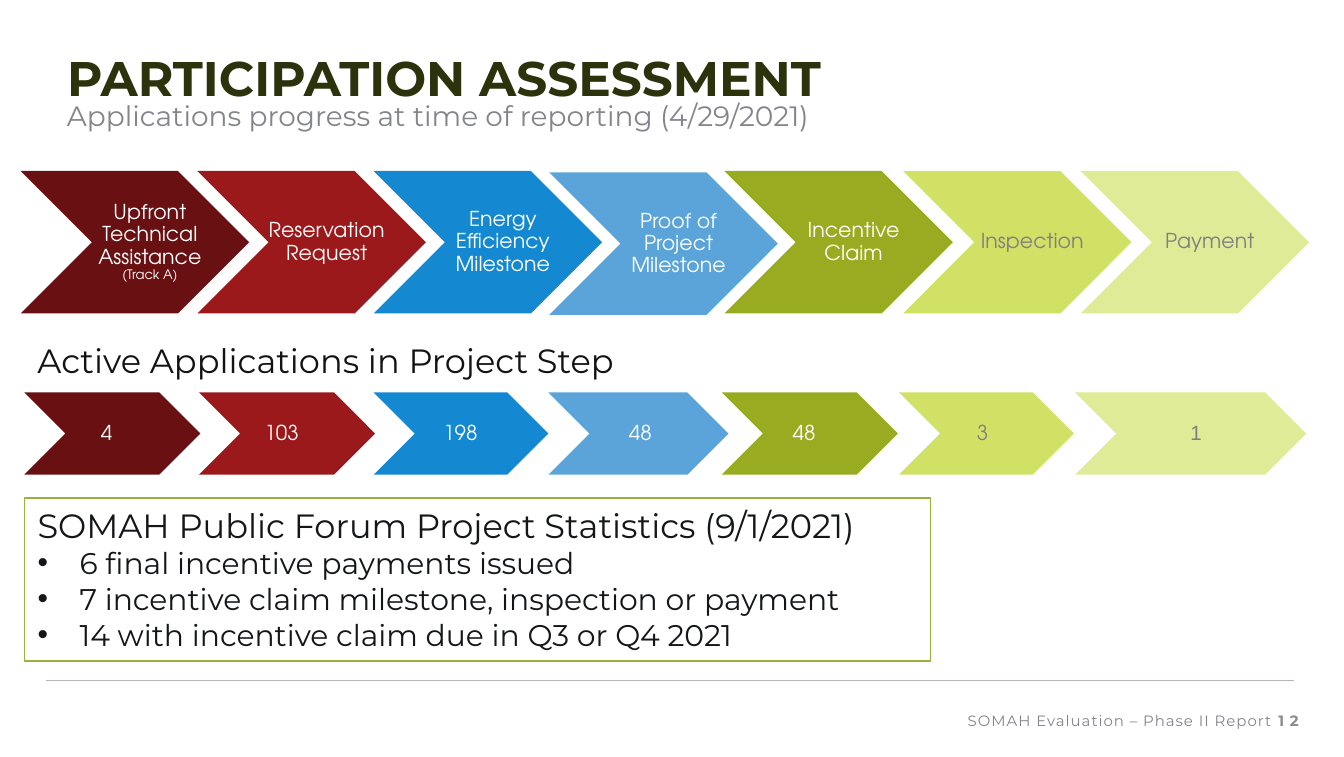
from pptx import Presentation
from pptx.dml.color import RGBColor
from pptx.enum.shapes import MSO_CONNECTOR, MSO_SHAPE
from pptx.enum.text import MSO_ANCHOR, MSO_AUTO_SIZE, PP_ALIGN
from pptx.oxml.ns import qn
from pptx.util import Pt
from lxml.etree import SubElement

HUES = {
    "maroon": "681012", "red": "9C191B", "blue": "1488D1", "sky": "5AA4DA",
    "olive": "99AB21", "lime": "D1E165", "pale": "E0EB98", "white": "FFFFFF",
    "gray": "808080", "title": "2B320C", "slate": "84848D", "page": "8C8C8C",
    "ink": "141313", "body": "141619", "frame": "97B23E", "rule": "BAB3BC",
}
SANS, GEO = "Montserrat", "TeX Gyre Adventor"
TIGHT = {"margin_left": Pt(3.6), "margin_right": Pt(1.44),
         "margin_top": Pt(1.44), "margin_bottom": Pt(1.44),
         "vertical_anchor": MSO_ANCHOR.MIDDLE}
TOP = {"vertical_anchor": MSO_ANCHOR.TOP}
MIDDLE = {"vertical_anchor": MSO_ANCHOR.MIDDLE}
CENTER = {"alignment": PP_ALIGN.CENTER, "line_spacing": 0.9}
LEFT = {"alignment": PP_ALIGN.LEFT}
RIGHT = {"alignment": PP_ALIGN.RIGHT}

STEPS = [
    ("Upfront Technical Assistance", 0.3, 0, "maroon", "white"),
    ("Reservation Request", 95, 0, "red", "white"),
    ("Energy Efficiency Milestone", 189.4, 0, "blue", "white"),
    ("Proof of Project Milestone", 283.5, 0.7, "sky", "white"),
    ("Incentive Claim", 377.3, 0, "olive", "white"),
    ("Inspection", 473, 0, "lime", "gray"),
    ("Payment", 568.1, 0, "pale", "gray"),
]
COUNTS = [
    ("4", 0, 94.3, 43, GEO), ("103", 93.6, 94.3, 43.2, GEO),
    ("198", 187.2, 93.6, 45.4, GEO), ("48", 280.8, 96.5, 48.2, GEO),
    ("48", 373.7, 94.3, 43, GEO), ("3", 468.7, 93.6, 43.6, GEO),
    ("1", 563, 123.8, 63.7, "Arial"),
]
FACTS = [
    "6 final incentive payments issued",
    "7 incentive claim milestone, inspection or payment",
    "14 with incentive claim due in Q3 or Q4 2021",
]


def color(name):
    return RGBColor.from_string(HUES[name])


def points(box):
    return [Pt(value) for value in box]


def apply(item, form):
    for key, value in form.items():
        setattr(item, key, value)


def write(para, text, size, hue, face=SANS, bold=False, gap=0):
    run = para.add_run()
    run.text = text
    apply(run.font, {"size": Pt(size), "name": face, "bold": bold})
    run.font.color.rgb = color(hue)
    if gap:
        run.font._element.set("spc", str(int(gap * 100)))


def label(slide, box, text, size, hue, frame=TOP, form=LEFT, **style):
    body = slide.shapes.add_textbox(*points(box)).text_frame
    body.word_wrap = True
    apply(body, frame)
    apply(body.paragraphs[0], form)
    write(body.paragraphs[0], text, size, hue, **style)
    return body


def chevron(slide, box, hue):
    shape = slide.shapes.add_shape(MSO_SHAPE.CHEVRON, *points(box))
    shape.shadow.inherit = False
    shape.fill.solid()
    shape.fill.fore_color.rgb = color(hue)
    shape.line.fill.background()


def header(slide, box):
    x, y, w, h = box
    title = slide.shapes.title
    apply(title, dict(zip(("left", "top", "width", "height"), points((x, y, w, 38.9)))))
    apply(title.text_frame, {**MIDDLE, "word_wrap": True, "auto_size": MSO_AUTO_SIZE.NONE})
    para = title.text_frame.paragraphs[0]
    apply(para, LEFT)
    write(para, "PARTICIPATION ASSESSMENT", 26, "title", bold=True)
    label(slide, (x, y + h - 27.4, w, 27.4),
          "Applications progress at time of reporting (4/29/2021)", 15, "slate")


def stages(slide, box):
    x, y, w, h = box
    for text, left, drop, hue, ink in STEPS:
        chevron(slide, (x + left, y + drop, 122.4, h), hue)
        body = label(slide, (x + left + 31.8, y + drop, 72.7, h), text, 11, ink,
                     TIGHT, CENTER, face=GEO)
        if left < 1:
            para = body.add_paragraph()
            apply(para, CENTER)
            write(para, "(Track A)", 7, ink, GEO)


def tallies(slide, box):
    x, y, w, h = box
    label(slide, (x, y, 360, 28.8), "Active Applications in Project Step", 18, "ink")
    top, high = y + h - 44, 44
    for (text, left, wide, mid, face), (*_, hue, ink) in zip(COUNTS, STEPS):
        chevron(slide, (x + left, top, wide, high), hue)
        label(slide, (x + left + mid - 17, top, 34, high), text, 11, ink,
              TIGHT, CENTER, face=face)


def forum(slide, box):
    shape = slide.shapes.add_shape(MSO_SHAPE.RECTANGLE, *points(box))
    shape.shadow.inherit = False
    shape.fill.background()
    shape.line.color.rgb = color("frame")
    shape.line.width = Pt(0.75)
    body = shape.text_frame
    apply(body, {**TOP, "word_wrap": True})
    head = body.paragraphs[0]
    apply(head, LEFT)
    write(head, "SOMAH Public Forum Project Statistics (9/1/2021)", 18, "body")
    for fact in FACTS:
        para = body.add_paragraph()
        apply(para, LEFT)
        props = para._p.get_or_add_pPr()
        props.set("marL", str(Pt(22.5)))
        props.set("indent", str(-Pt(22.5)))
        SubElement(props, qn("a:buFont")).set("typeface", "Arial")
        SubElement(props, qn("a:buChar")).set("char", "•")
        write(para, fact, 16, "body")


def footer(slide, box):
    x, y, w, h = box
    rule = slide.shapes.add_connector(MSO_CONNECTOR.STRAIGHT, *points((x, y, x + w, y)))
    rule.line.color.rgb = color("rule")
    rule.line.width = Pt(0.5)
    SubElement(rule._element.spPr, qn("a:effectLst"))
    top = y + h - 21.6
    label(slide, (x + w - 248.4, top, 243.4, 21.6),
          "SOMAH Evaluation – Phase II Report", 8, "slate", MIDDLE, RIGHT, gap=0.5)
    label(slide, (x + w - 28.8, top, 38.2, 21.6), "12", 8, "page",
          MIDDLE, RIGHT, bold=True, gap=3)


def main():
    deck = Presentation()
    deck.slide_width, deck.slide_height = Pt(720), Pt(405.36)
    slide = deck.slides.add_slide(deck.slide_layouts[5])
    header(slide, (28.8, 21.6, 648, 55.2))
    stages(slide, (10.8, 91.6, 690.5, 76.3))
    tallies(slide, (13, 178.6, 686.8, 75.6))
    forum(slide, (13, 266.6, 485.5, 87.3))
    footer(slide, (24.5, 364.6, 668.9, 32.2))
    deck.save("out.pptx")


if __name__ == "__main__":
    main()
